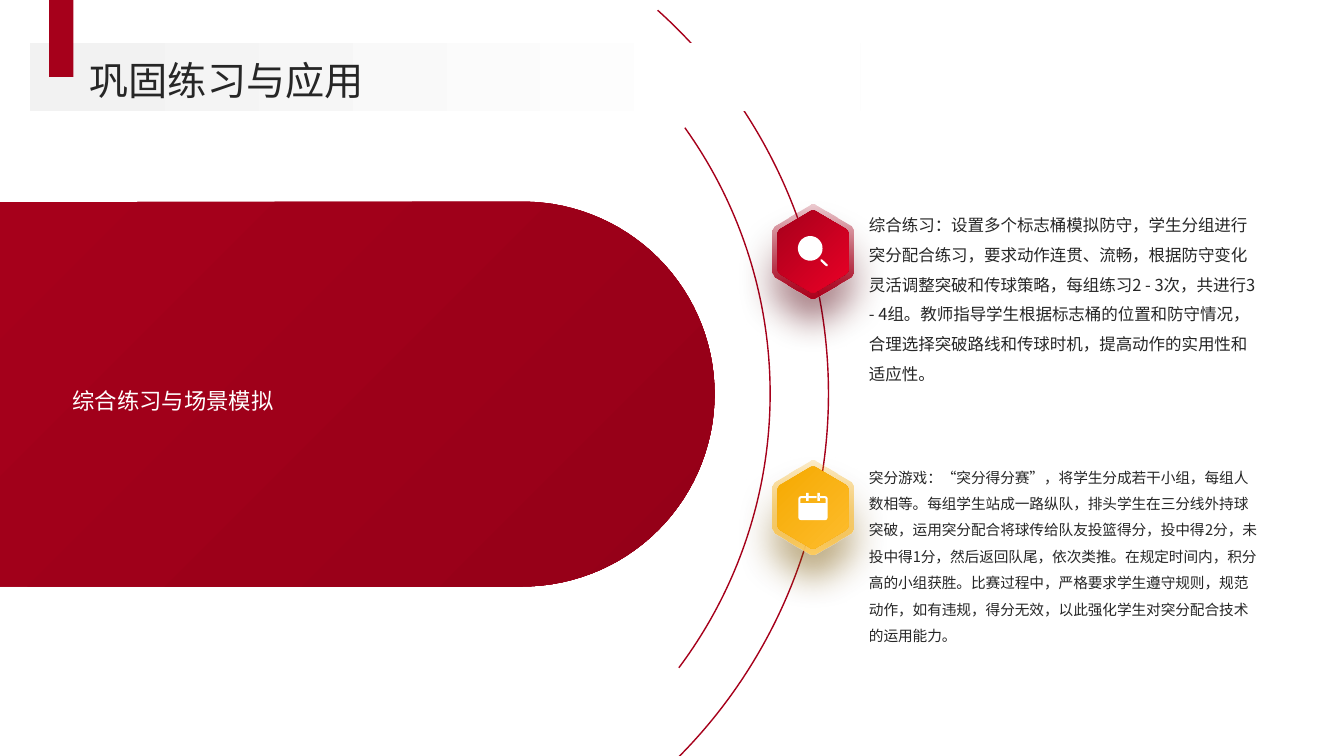
from math import cos, pi, sin

from lxml.etree import SubElement
from pptx import Presentation
from pptx.dml.color import RGBColor
from pptx.enum.shapes import MSO_SHAPE as Preset
from pptx.enum.text import MSO_ANCHOR as Anchor
from pptx.oxml.ns import qn
from pptx.util import Cm, Pt

FONT = "Noto Sans CJK SC"
COLORS = {
    "red": "A6001B", "dark_red": "950018", "rim_red": "AD001C", "bright_red": "EB0026",
    "red_shadow": "53000E", "gold": "F5A901", "rim_gold": "FECD61",
    "bright_gold": "FEBD2D", "gold_shadow": "7A5500",
    "white": "FFFFFF", "band": "F2F2F2", "text": "262626",
}
HEADING = "巩固练习与应用"
TOPIC = "综合练习与场景模拟"
PRACTICE = (
    "综合练习：设置多个标志桶模拟防守，学生分组进行突分配合练习，要求动作连贯、流畅，"
    "根据防守变化灵活调整突破和传球策略，每组练习2 - 3次，共进行3 - 4组。"
    "教师指导学生根据标志桶的位置和防守情况，合理选择突破路线和传球时机，"
    "提高动作的实用性和适应性。"
)
GAME = (
    "突分游戏：“突分得分赛”，将学生分成若干小组，每组人数相等。"
    "每组学生站成一路纵队，排头学生在三分线外持球突破，运用突分配合将球传给队友投篮得分，"
    "投中得2分，未投中得1分，然后返回队尾，依次类推。在规定时间内，积分高的小组获胜。"
    "比赛过程中，严格要求学生遵守规则，规范动作，如有违规，得分无效，"
    "以此强化学生对突分配合技术的运用能力。"
)


def rgb(name):
    return RGBColor.from_string(COLORS[name])


def paint(shape, *names, angle=0, positions=(0, 1)):
    """Fill with one colour, or with a two-colour gradient (angle clockwise)."""
    shape.shadow.inherit = False
    shape.line.fill.background()
    if len(names) == 1:
        shape.fill.solid()
        shape.fill.fore_color.rgb = rgb(names[0])
        return
    shape.fill.gradient()
    shape.fill.gradient_angle = -angle % 360
    for stop, name, position in zip(shape.fill.gradient_stops, names, positions):
        stop.color.rgb = rgb(name)
        stop.position = position


def set_alpha(color_element, percent):
    SubElement(color_element, qn("a:alpha"), val=str(percent * 1000))


def cast_shadow(shape, name):
    effects = shape._element.spPr.find(qn("a:effectLst"))
    shadow = SubElement(effects, qn("a:outerShdw"), blurRad=str(Pt(26)), dist=str(Pt(16)),
                        dir=str(90 * 60000), algn="t", rotWithShape="0")
    set_alpha(SubElement(shadow, qn("a:srgbClr"), val=COLORS[name]), 65)


def add_outline(shapes, contours, center=(0, 0)):
    """Closed contours, given in centimetres around a centre, as one shape."""
    placed = [[(Cm(center[0] + x), Cm(center[1] + y)) for x, y in contour]
              for contour in contours]
    builder = shapes.build_freeform(*placed[0][0], scale=1.0)
    for index, contour in enumerate(placed):
        if index:
            builder.move_to(*contour[0])
        builder.add_line_segments(contour[1:], close=True)
    return builder.convert_to_shape()


def arc_points(x, y, radius, start, sweep, steps=60):
    angles = [start + sweep * step / steps for step in range(steps + 1)]
    return [(x + radius * cos(angle), y + radius * sin(angle)) for angle in angles]


def box(left, top, right, bottom):
    return [(left, top), (right, top), (right, bottom), (left, bottom)]


def hexagon(half_width, half_height):
    """Upright hexagon with slightly cut corners."""
    corner = [(0.05, 1), (0.94, 0.54), (1, 0.45)]
    quarters = [(1, 1, 1), (1, -1, -1), (-1, -1, 1), (-1, 1, -1)]
    return [(x * sign_x * half_width, y * sign_y * half_height)
            for sign_x, sign_y, order in quarters for x, y in corner[::order]]


def magnifier():
    lens = arc_points(-0.07, -0.08, 0.31, 0, 2 * pi)
    handle = [(0.19, 0.24), (0.19, 0.2), (0.23, 0.2), (0.37, 0.33), (0.37, 0.37), (0.33, 0.37)]
    return [lens, handle]


def calendar():
    page = [(-0.3, -0.29), (-0.17, -0.29), (-0.17, -0.24), (-0.3, -0.24), (-0.32, -0.22),
            (-0.32, -0.11), (0.32, -0.11), (0.32, -0.22), (0.3, -0.24), (0.16, -0.24),
            (0.16, -0.29), (0.3, -0.29), (0.35, -0.27), (0.37, -0.22), (0.37, 0.25),
            (0.35, 0.3), (0.3, 0.32), (-0.3, 0.32), (-0.35, 0.3), (-0.37, 0.25),
            (-0.37, -0.22), (-0.35, -0.27)]
    rings = [box(left, -0.37, left + 0.06, -0.17) for left in (-0.17, 0.11)]
    return [page, box(-0.11, -0.29, 0.09, -0.24), *rings]


def add_badge(slide, center, icon, base, rim, bright, shadow):
    shapes = slide.shapes.add_group_shape().shapes
    halo = add_outline(shapes, [hexagon(1.03, 1.18)], center)
    paint(halo, base, rim, angle=90)
    set_alpha(next(halo._element.iter(qn("a:srgbClr"))), 20)
    cast_shadow(halo, shadow)
    paint(add_outline(shapes, [hexagon(0.9, 1.03)], center), base, bright, angle=45)
    paint(add_outline(shapes, icon, center), "white")


def add_arc(slide, radius, start, end):
    center_x, center_y = 7.89, 9.92
    arc = slide.shapes.add_shape(Preset.ARC, Cm(center_x - radius), Cm(center_y - radius),
                                 Cm(2 * radius), Cm(2 * radius))
    arc.adjustments[0], arc.adjustments[1] = start, end
    arc.shadow.inherit = False
    arc.fill.background()
    arc.line.color.rgb = rgb("red")
    arc.line.width = Pt(1)


def add_rectangle(slide, left, top, width, height, *names, **gradient):
    shape = slide.shapes.add_shape(Preset.RECTANGLE, Cm(left), Cm(top), Cm(width), Cm(height))
    paint(shape, *names, **gradient)


def add_text(slide, place, text, size, color="text", spacing=1.5, anchor=Anchor.TOP):
    frame = slide.shapes.add_textbox(*map(Cm, place)).text_frame
    frame.word_wrap = True
    frame.vertical_anchor = anchor
    frame.margin_left = frame.margin_right = frame.margin_top = frame.margin_bottom = 0
    paragraph = frame.paragraphs[0]
    paragraph.text = text
    paragraph.line_spacing = spacing
    font = paragraph.font
    font.name = FONT
    SubElement(font._element, qn("a:ea"), typeface=FONT)
    font.size = Pt(size)
    font.color.rgb = rgb(color)


def main():
    presentation = Presentation()
    presentation.slide_width, presentation.slide_height = Cm(33.87), Cm(19.05)
    slide = presentation.slides.add_slide(presentation.slide_layouts[6])

    # Orbit lines and the red panel with its round end
    add_arc(slide, 12.99, 187.17, 28.46)
    add_arc(slide, 11.52, 194.66, 22.11)
    panel = [(0, 5.08), *arc_points(13.16, 9.93, 4.85, -pi / 2, pi), (0, 14.78)]
    paint(add_outline(slide.shapes, [panel]), "red", "dark_red", angle=45)

    # Two activities
    add_badge(slide, (20.49, 6.34), magnifier(), "red", "rim_red", "bright_red", "red_shadow")
    add_text(slide, (21.9, 5.18, 9.8, 4.29), PRACTICE, 11.8)
    add_badge(slide, (20.49, 12.79), calendar(), "gold", "rim_gold", "bright_gold", "gold_shadow")
    add_text(slide, (21.9, 11.58, 9.8, 4.62), GAME, 10.5)
    add_text(slide, (1.83, 6.55, 14.45, 6.76), TOPIC, 16, "white", anchor=Anchor.MIDDLE)

    # Heading band
    add_rectangle(slide, 0.76, 1.09, 20.93, 1.7, "band", "white", positions=(0.05, 0.84))
    add_rectangle(slide, 1.24, 0, 0.61, 1.94, "red")
    add_text(slide, (2.26, 1.3, 29.72, 1.3), HEADING, 28, spacing=1.1, anchor=Anchor.MIDDLE)

    presentation.save("out.pptx")


if __name__ == "__main__":
    main()
